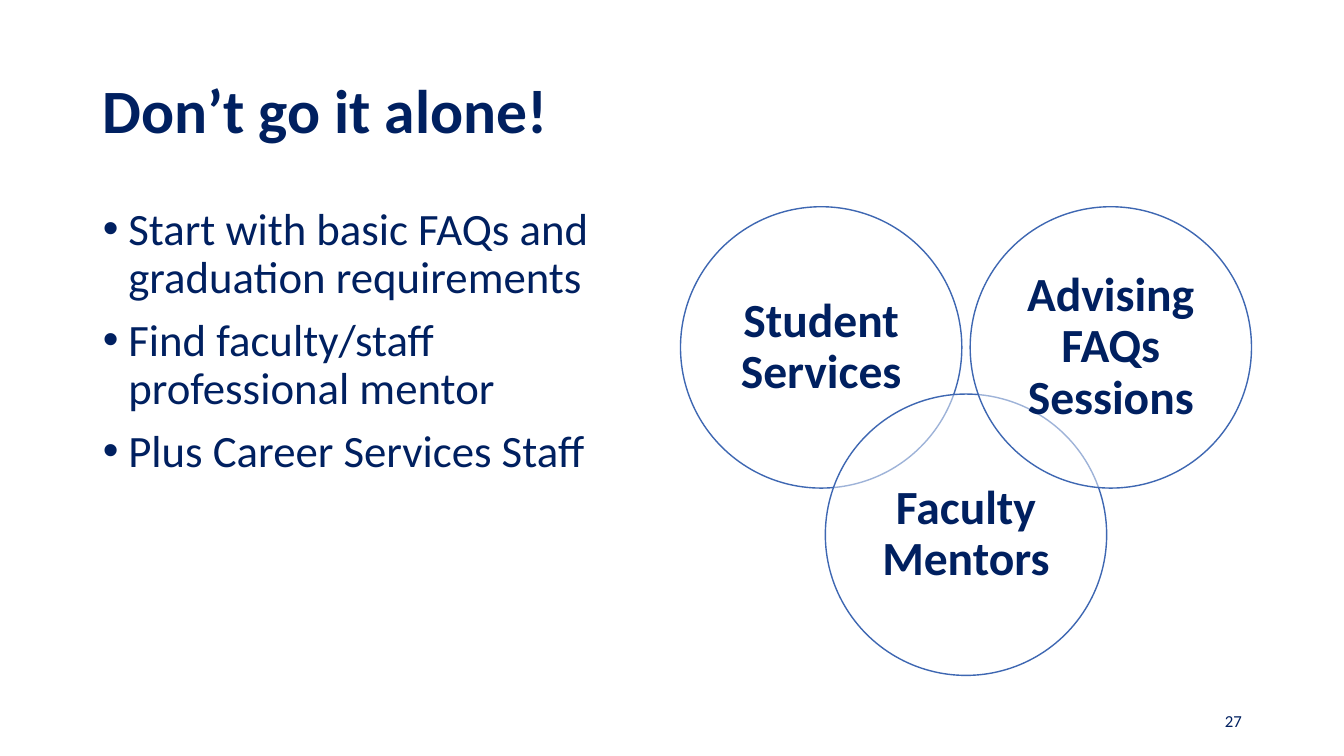
from dataclasses import dataclass

from pptx import Presentation
from pptx.dml.color import RGBColor
from pptx.enum.shapes import MSO_SHAPE as Shape
from pptx.enum.text import MSO_ANCHOR as Anchor, MSO_AUTO_SIZE as AutoSize, PP_ALIGN as Align
from pptx.oxml.ns import qn
from pptx.util import Cm, Pt
from lxml.etree import SubElement


@dataclass(frozen=True)
class Theme:
    font: str = "Calibri"
    ink: str = "002060"
    paper: str = "FFFFFF"
    outline: str = "3E67B2"
    title_size: int = 44
    body_size: int = 32
    circle_size: int = 34
    number_size: int = 12


def add_bullet(paragraph, indent):
    properties = paragraph._p.get_or_add_pPr()
    properties.set("marL", str(indent))
    properties.set("indent", str(-indent))
    SubElement(properties, qn("a:buFont"), typeface="Arial")
    SubElement(properties, qn("a:buChar"), char="•")


def write(shape, *lines, theme, size, bold=False, align=Align.LEFT,
          anchor=Anchor.MIDDLE, spacing=0.9, gap=0, inset=None, bullet=None):
    frame = shape.text_frame
    frame.word_wrap = True
    frame.auto_size = AutoSize.NONE
    frame.vertical_anchor = anchor
    if inset is not None:
        frame.margin_left = frame.margin_right = inset
        frame.margin_top = frame.margin_bottom = inset
    for index, line in enumerate(lines):
        paragraph = frame.add_paragraph() if index else frame.paragraphs[0]
        paragraph.alignment = align
        paragraph.line_spacing = spacing
        paragraph.space_before = Pt(gap if index else 0)
        if bullet:
            add_bullet(paragraph, bullet)
        run = paragraph.add_run()
        run.text = line
        run.font.name = theme.font
        run.font.size = Pt(size)
        run.font.bold = bold
        run.font.color.rgb = RGBColor.from_string(theme.ink)


class SlideBuilder:
    def __init__(self, slide, theme):
        self.slide = slide
        self.theme = theme

    def place(self, shape, left, top, width, height):
        shape.left, shape.top = Cm(left), Cm(top)
        shape.width, shape.height = Cm(width), Cm(height)
        return shape

    def title(self, text, *box):
        shape = self.place(self.slide.shapes.title, *box)
        write(shape, text, theme=self.theme, size=self.theme.title_size, bold=True)

    def bullets(self, lines, *box):
        shape = self.place(self.slide.placeholders[1], *box)
        write(shape, *lines, theme=self.theme, size=self.theme.body_size,
              anchor=Anchor.TOP, gap=10, bullet=Cm(0.64))

    def circle(self, text, left, top, diameter):
        shape = self.slide.shapes.add_shape(
            Shape.OVAL, Cm(left), Cm(top), Cm(diameter), Cm(diameter))
        shape.shadow.inherit = False
        shape.fill.solid()
        shape.fill.fore_color.rgb = RGBColor.from_string(self.theme.paper)
        fill_color = shape.element.spPr.find(qn("a:solidFill"))[0]
        SubElement(fill_color, qn("a:alpha"), val="50000")
        shape.line.color.rgb = RGBColor.from_string(self.theme.outline)
        shape.line.width = Pt(1)
        write(shape, text, theme=self.theme, size=self.theme.circle_size,
              bold=True, align=Align.CENTER, inset=Cm(0.36))

    def number(self, text, *box):
        shape = self.slide.shapes.add_textbox(*map(Cm, box))
        write(shape, text, theme=self.theme, size=self.theme.number_size,
              align=Align.RIGHT, spacing=1.0)


def main():
    presentation = Presentation()
    presentation.slide_width, presentation.slide_height = Cm(33.87), Cm(19.05)
    slide = presentation.slides.add_slide(presentation.slide_layouts[1])
    builder = SlideBuilder(slide, Theme())

    # Title and advice
    builder.title("Don’t go it alone!", 2.34, 1.02, 29.21, 3.68)
    builder.bullets(["Start with basic FAQs and graduation requirements",
                     "Find faculty/staff professional mentor",
                     "Plus Career Services Staff"], 2.34, 5.08, 14.4, 12.09)

    # Overlapping circles, the middle one lowered
    left, top, step, drop = 17.15, 5.21, 3.65, 4.72
    supports = ["Student Services", "Faculty Mentors", "Advising FAQs Sessions"]
    for index, support in enumerate(supports):
        builder.circle(support, left + index * step, top + index % 2 * drop, 7.09)

    # Slide number
    builder.number("27", 23.93, 17.65, 7.62, 1.02)

    presentation.save("out.pptx")


if __name__ == "__main__":
    main()
